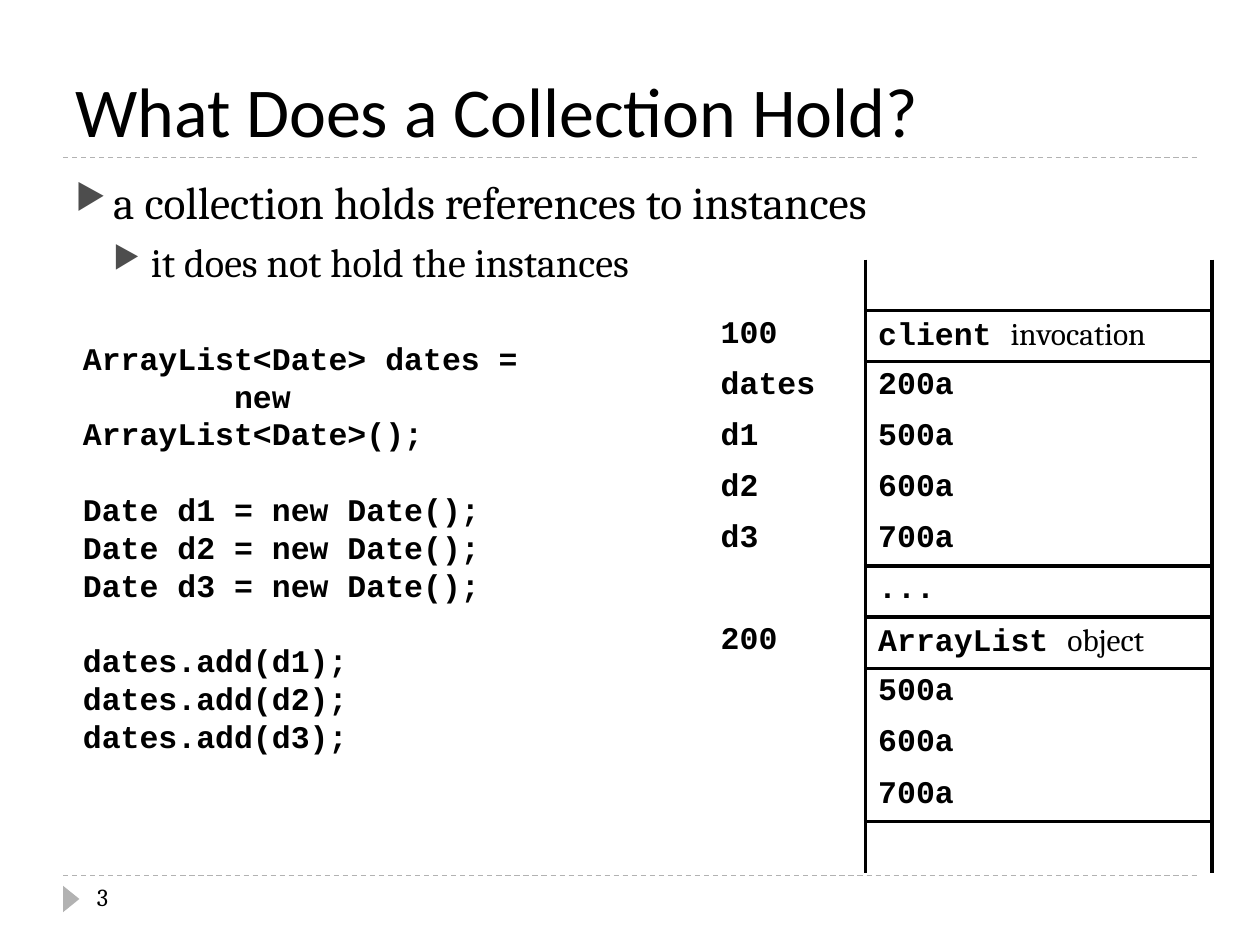
from dataclasses import dataclass

from lxml.etree import SubElement
from pptx import Presentation
from pptx.dml.color import RGBColor
from pptx.enum.dml import MSO_LINE
from pptx.enum.shapes import MSO_CONNECTOR, MSO_SHAPE
from pptx.enum.text import MSO_ANCHOR
from pptx.oxml.ns import qn
from pptx.util import Inches, Pt


@dataclass(frozen=True)
class Theme:
    ink: str = "000000"
    rule: str = "B2B2B2"
    bullet: str = "4D4D4D"
    heading_font: str = "Calibri"
    body_font: str = "Cambria"
    code_font: str = "Courier New"
    title_size: float = 40
    bullet_sizes: tuple = (26, 23)
    code_size: float = 18
    code_line: float = 21.6
    number_size: float = 14
    rule_width: float = 0.75
    border_width: float = 2.25


THEME = Theme()
CODE = {"name": THEME.code_font, "size": Pt(THEME.code_size), "bold": True}
PROSE = {"name": THEME.body_font, "size": Pt(THEME.code_size), "bold": False}

BULLETS = ["a collection holds references to instances",
           "it does not hold the instances"]

CODE_GROUPS = [
    ["ArrayList<Date> dates =", "new ArrayList<Date>();"],
    ["Date d1 = new Date();", "Date d2 = new Date();", "Date d3 = new Date();"],
    ["dates.add(d1);", "dates.add(d2);", "dates.add(d3);"],
]
CONTINUATION_INDENT = 1.2

# label, code text, prose text, rule below the row
MEMORY_ROWS = [
    ("", "", "", True),
    ("100", "client ", "invocation", True),
    ("dates", "200a", "", False),
    ("d1", "500a", "", False),
    ("d2", "600a", "", False),
    ("d3", "700a", "", True),
    ("", "...", "", True),
    ("200", "ArrayList ", "object", True),
    ("", "500a", "", False),
    ("", "600a", "", False),
    ("", "700a", "", True),
    ("", "", "", False),
]


def apply_format(target, values):
    for name, value in values.items():
        setattr(target, name, value)


def add_run(paragraph, text, font_format):
    run = paragraph.add_run()
    run.text = text
    apply_format(run.font, font_format)
    run.font.color.rgb = RGBColor.from_string(THEME.ink)


def add_text_frame(slide, left, top, width, height, anchor=MSO_ANCHOR.TOP):
    box = slide.shapes.add_textbox(*map(Inches, (left, top, width, height)))
    apply_format(box.text_frame, {"word_wrap": True, "vertical_anchor": anchor})
    return box.text_frame


def next_paragraph(frame, index):
    return frame.add_paragraph() if index else frame.paragraphs[0]


def add_dashed_rule(slide, top):
    line = slide.shapes.add_connector(
        MSO_CONNECTOR.STRAIGHT, Inches(0.5), Inches(top), Inches(9.5), Inches(top))
    line.line.color.rgb = RGBColor.from_string(THEME.rule)
    apply_format(line.line, {"width": Pt(THEME.rule_width),
                             "dash_style": MSO_LINE.DASH})
    SubElement(line._element.spPr, qn("a:effectLst"))


def add_page_marker(slide):
    marker = slide.shapes.add_shape(
        MSO_SHAPE.ISOSCELES_TRIANGLE, *map(Inches, (0.46, 7.07, 0.21, 0.13)))
    marker.rotation = 90
    marker.shadow.inherit = False
    marker.fill.solid()
    marker.fill.fore_color.rgb = RGBColor.from_string(THEME.rule)
    marker.line.fill.background()


def set_bullet(paragraph, level):
    properties = paragraph._p.get_or_add_pPr()
    properties.set("marL", str(Inches(0.3 * (level + 1))))
    properties.set("indent", str(Inches(-0.3)))
    color = SubElement(properties, qn("a:buClr"))
    SubElement(color, qn("a:srgbClr"), val=THEME.bullet)
    SubElement(properties, qn("a:buSzPct"), val="76000")
    SubElement(properties, qn("a:buChar"), char="▶")


def add_bullets(slide):
    frame = add_text_frame(slide, 0.5, 1.33, 9, 5.4)
    for level, text in enumerate(BULLETS):
        paragraph = next_paragraph(frame, level)
        apply_format(paragraph, {"level": level, "space_before": Pt(6 - level)})
        set_bullet(paragraph, level)
        add_run(paragraph, text, {"name": THEME.body_font,
                                  "size": Pt(THEME.bullet_sizes[level])})


def add_code(slide):
    """Code lines, with one line of space between groups."""
    frame = add_text_frame(slide, 0.56, 2.64, 4.36, 3.13)
    count = 0
    for group in CODE_GROUPS:
        for position, text in enumerate(group):
            paragraph = next_paragraph(frame, count)
            starts_group = position == 0 and count > 0
            apply_format(paragraph, {
                "line_spacing": Pt(THEME.code_line),
                "space_before": Pt(THEME.code_line if starts_group else 0)})
            if text.startswith("new"):
                paragraph._p.get_or_add_pPr().set(
                    "indent", str(Inches(CONTINUATION_INDENT)))
            add_run(paragraph, text, CODE)
            count += 1


def set_borders(cell, sides):
    """Draw the given sides (of L, R, T, B) and clear the others."""
    properties = cell._tc.get_or_add_tcPr()
    for side in "LRTB":
        border = SubElement(properties, qn(f"a:ln{side}"),
                            w=str(Pt(THEME.border_width)))
        if side in sides:
            fill = SubElement(border, qn("a:solidFill"))
            SubElement(fill, qn("a:srgbClr"), val=THEME.ink)
        else:
            SubElement(border, qn("a:noFill"))


def fill_cell(cell, runs, sides):
    set_borders(cell, sides)
    cell.fill.background()
    paragraph = cell.text_frame.paragraphs[0]
    for text, font_format in runs:
        if text:
            add_run(paragraph, text, font_format)


def add_memory_table(slide):
    table = slide.shapes.add_table(
        len(MEMORY_ROWS), 2, *map(Inches, (5.62, 2.06, 4, 4.87))).table
    apply_format(table, {"first_row": False, "horz_banding": False})
    for column, width in zip(table.columns, (1.25, 2.75)):
        column.width = Inches(width)
    rule_above = False
    for index, (label, code, prose, rule_below) in enumerate(MEMORY_ROWS):
        sides = "LR" + "T" * rule_above + "B" * rule_below
        fill_cell(table.cell(index, 0), [(label, CODE)], "R")
        fill_cell(table.cell(index, 1), [(code, CODE), (prose, PROSE)], sides)
        rule_above = rule_below


def main():
    presentation = Presentation()
    apply_format(presentation, {"slide_width": Inches(10),
                                "slide_height": Inches(7.5)})
    slide = presentation.slides.add_slide(presentation.slide_layouts[6])
    for top in (6.95, 1.25):
        add_dashed_rule(slide, top)
    add_page_marker(slide)
    title = add_text_frame(slide, 0.5, 0.17, 9, 1.08, MSO_ANCHOR.BOTTOM)
    add_run(title.paragraphs[0], "What Does a Collection Hold?",
            {"name": THEME.heading_font, "size": Pt(THEME.title_size)})
    add_bullets(slide)
    number = add_text_frame(slide, 0.67, 6.95, 2.17, 0.4)
    add_run(number.paragraphs[0], "3",
            {"name": THEME.body_font, "size": Pt(THEME.number_size)})
    add_code(slide)
    add_memory_table(slide)
    presentation.save("out.pptx")


if __name__ == "__main__":
    main()
